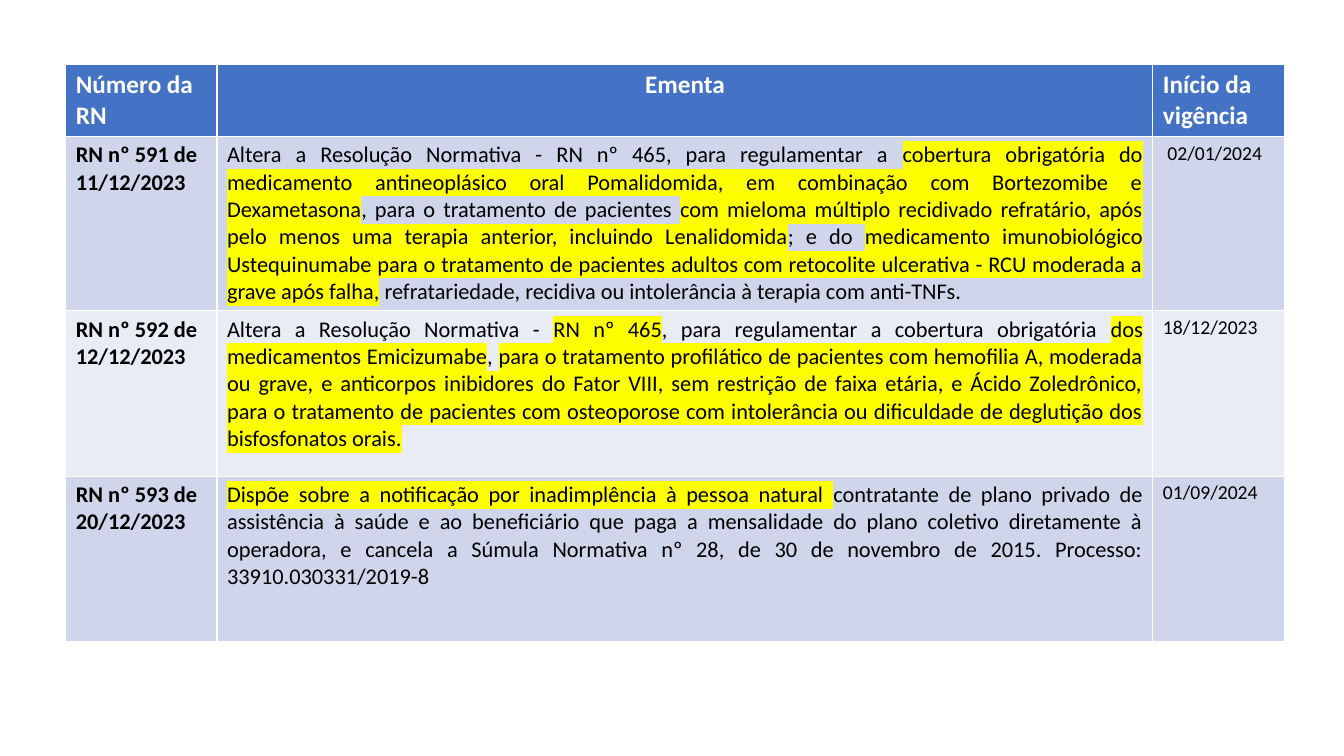
from dataclasses import dataclass

from lxml.etree import SubElement as Sub
from pptx import Presentation
from pptx.dml.color import RGBColor as RGB
from pptx.enum.text import PP_ALIGN as Align
from pptx.oxml.ns import qn
from pptx.table import _Cell as Cell
from pptx.util import Pt

HUES = {"head": "4472C4", "odd": "CFD5EA", "even": "E9EBF5",
        "white": "FFFFFF", "black": "000000", "mark": "FFFF00"}
WIDTHS = (108, 668.5, 94)
HEIGHTS = (44.7, 118.2, 118.2, 118.2)


@dataclass(frozen=True)
class Bit:
    """A run of text, marked or plain."""
    text: str
    mark: bool = False


@dataclass(frozen=True)
class Rule:
    """One resolution: number, summary and start date."""
    name: str
    body: tuple[Bit, ...]
    date: str


@dataclass(frozen=True)
class Look:
    """Text style of a cell."""
    size: int
    bold: bool = False
    align: Align = Align.LEFT
    hue: str = "black"


HEADS = ("Número da RN", "Ementa", "Início da vigência")
TOPS = (Look(18, True, hue="white"), Look(18, True, Align.CENTER, "white"),
        Look(18, True, hue="white"))
LOOKS = (Look(16, True), Look(16, align=Align.JUSTIFY), Look(14))

RULES = (
    Rule("RN nº 591 de 11/12/2023", (
        Bit("Altera a Resolução Normativa - RN nº 465, para regulamentar a "),
        Bit("cobertura obrigatória do medicamento antineoplásico oral Pomalidomida, "
            "em combinação com Bortezomibe e Dexametasona", True),
        Bit(", para o tratamento de pacientes "),
        Bit("com mieloma múltiplo recidivado refratário, após pelo menos uma "
            "terapia anterior, incluindo Lenalidomida", True),
        Bit("; e do "),
        Bit("medicamento imunobiológico Ustequinumabe para o tratamento de "
            "pacientes adultos com retocolite ulcerativa - RCU moderada a grave "
            "após falha,", True),
        Bit(" refratariedade, recidiva ou intolerância à terapia com anti-TNFs."),
    ), " 02/01/2024"),
    Rule("RN nº 592 de 12/12/2023", (
        Bit("Altera a Resolução Normativa - "),
        Bit("RN nº 465", True),
        Bit(", para regulamentar a cobertura obrigatória "),
        Bit("dos medicamentos Emicizumabe", True),
        Bit(", "),
        Bit("para o tratamento profilático de pacientes com hemofilia A, moderada "
            "ou grave, e anticorpos inibidores do Fator VIII, sem restrição de "
            "faixa etária, e Ácido Zoledrônico, para o tratamento de pacientes com "
            "osteoporose com intolerância ou dificuldade de deglutição dos "
            "bisfosfonatos orais.", True),
    ), "18/12/2023"),
    Rule("RN nº 593 de 20/12/2023", (
        Bit("Dispõe sobre a notificação por inadimplência à pessoa natural ", True),
        Bit("contratante de plano privado de assistência à saúde e ao beneficiário "
            "que paga a mensalidade do plano coletivo diretamente à operadora, e "
            "cancela a Súmula Normativa nº 28, de 30 de novembro de 2015. "
            "Processo: 33910.030331/2019-8"),
    ), "01/09/2024"),
)


def fill(cell: Cell, bits: tuple[Bit, ...], look: Look, back: str) -> None:
    """Colour a cell and write its runs."""
    cell.fill.solid()
    cell.fill.fore_color.rgb = RGB.from_string(HUES[back])
    para = cell.text_frame.paragraphs[0]
    para.alignment = look.align
    for bit in bits:
        run = para.add_run()
        run.text = bit.text
        font = run.font
        font.size, font.bold = Pt(look.size), look.bold
        font.color.rgb = RGB.from_string(HUES[look.hue])
        if bit.mark:
            glow = Sub(run._r.get_or_add_rPr(), qn("a:highlight"))
            Sub(glow, qn("a:srgbClr"), val=HUES["mark"])
        font.name = "Calibri"


def main() -> None:
    """Build the slide with the table of resolutions."""
    deck = Presentation()
    deck.slide_width, deck.slide_height = Pt(960), Pt(540)
    slide = deck.slides.add_slide(deck.slide_layouts[6])
    grid = slide.shapes.add_table(
        len(HEIGHTS), len(WIDTHS), Pt(47), Pt(46.2),
        Pt(sum(WIDTHS)), Pt(sum(HEIGHTS))).table
    for col, width in zip(grid.columns, WIDTHS):
        col.width = Pt(width)
    for row, height in zip(grid.rows, HEIGHTS):
        row.height = Pt(height)
    for cell, text, look in zip(grid.rows[0].cells, HEADS, TOPS):
        fill(cell, (Bit(text),), look, "head")
    for num, rule in enumerate(RULES, 1):
        parts = ((Bit(rule.name),), rule.body, (Bit(rule.date),))
        back = "odd" if num % 2 else "even"
        for cell, bits, look in zip(grid.rows[num].cells, parts, LOOKS):
            fill(cell, bits, look, back)
    deck.save("out.pptx")


if __name__ == "__main__":
    main()
